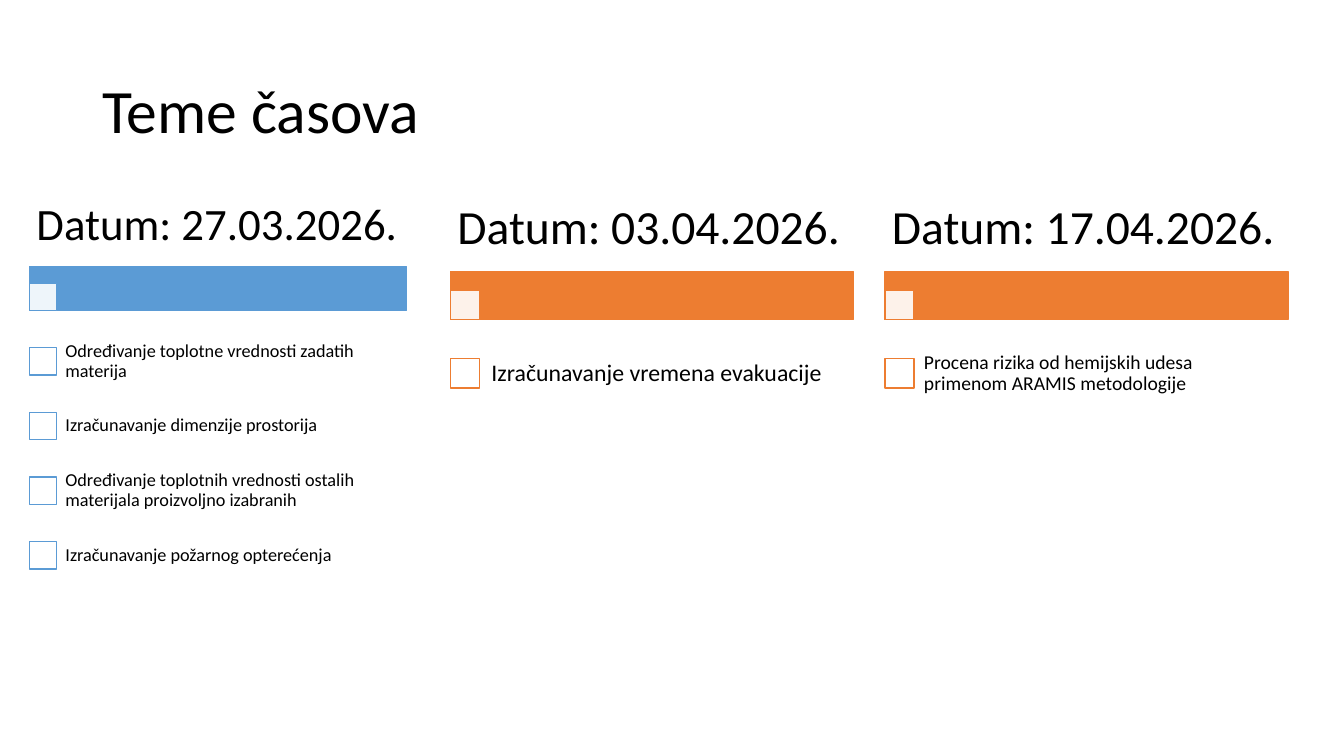
import pptx
import pptx.dml.color
import pptx.enum.shapes
import pptx.enum.text
import pptx.util
from lxml import etree
from pptx.util import Cm

BLUE, ORANGE = "5B9BD5", "ED7D31"
BASE_WIDTH = 9.5  # column width at which the measures below hold
TOP = 4.7

# left, width, colour, date, date size, topics, topic size, topic inset
COLUMNS = [
    (0.74, 9.5, BLUE, "27.03.2026.", 32, [
        "Određivanje toplotne vrednosti zadatih materija",
        "Izračunavanje dimenzije prostorija",
        "Određivanje toplotnih vrednosti ostalih materijala proizvoljno izabranih",
        "Izračunavanje požarnog opterećenja",
    ], 13, 0.25),
    (11.35, 10.16, ORANGE, "03.04.2026.", 34,
     ["Izračunavanje vremena evakuacije"], 17, 0.33),
    (22.3, 10.16, ORANGE, "17.04.2026.", 34,
     ["Procena rizika od hemijskih udesa primenom ARAMIS metodologije"], 14, 0.28),
]


def add_rectangle(shapes, left, top, width, height, fill, line):
    shape = shapes.add_shape(pptx.enum.shapes.MSO_SHAPE.RECTANGLE,
                             Cm(left), Cm(top), Cm(width), Cm(height))
    shape.shadow.inherit = False
    shape.fill.solid()
    shape.fill.fore_color.rgb = pptx.dml.color.RGBColor.from_string(fill)
    shape.line.color.rgb = pptx.dml.color.RGBColor.from_string(line)
    shape.line.width = pptx.util.Pt(1)
    return shape


def add_text(shapes, left, top, width, height, text, size, side_inset, end_inset):
    """Add a wrapped, vertically centred text box."""
    frame = shapes.add_textbox(Cm(left), Cm(top), Cm(width), Cm(height)).text_frame
    frame.word_wrap = True
    frame.vertical_anchor = pptx.enum.text.MSO_ANCHOR.MIDDLE
    frame.margin_left = frame.margin_right = Cm(side_inset)
    frame.margin_top = frame.margin_bottom = Cm(end_inset)
    paragraph = frame.paragraphs[0]
    paragraph.text = text
    paragraph.line_spacing = 0.9
    paragraph.font.name = "Calibri"
    paragraph.font.size = pptx.util.Pt(size)
    paragraph.font.color.rgb = pptx.dml.color.RGBColor.from_string("000000")


presentation = pptx.Presentation()
presentation.slide_width, presentation.slide_height = Cm(33.87), Cm(19.05)
slide = presentation.slides.add_slide(presentation.slide_layouts[6])

add_text(slide.shapes, 2.33, 1.01, 29.21, 3.68, "Teme časova", 44, 0.25, 0.13)

for left, width, colour, date, date_size, topics, topic_size, inset in COLUMNS:
    shapes = slide.shapes.add_group_shape().shapes
    scale = width / BASE_WIDTH
    heading_height = 2.01 * scale
    bar_height = 1.12 * scale
    box = 0.69 * scale
    row_height = 1.63 * scale
    text_offset = 0.66 * scale
    bar_top = TOP + heading_height
    bar_bottom = bar_top + bar_height
    rows_top = bar_bottom + 0.46 * scale

    add_rectangle(shapes, left, bar_top, width, bar_height, colour, colour)
    bar_box = add_rectangle(shapes, left, bar_bottom - box, box, box, "FFFFFF", colour)
    fill_colour = bar_box.fill._xPr.find(".//" + pptx.oxml.ns.qn("a:srgbClr"))
    etree.SubElement(fill_colour, pptx.oxml.ns.qn("a:alpha"), val="90000")
    add_text(shapes, left, TOP, width, heading_height, f"Datum: {date}", date_size, 0.18, 0.12)

    for index, topic in enumerate(topics):
        row_top = rows_top + index * row_height
        add_rectangle(shapes, left, row_top + (row_height - box) / 2, box, box, "FFFFFF", colour)
        add_text(shapes, left + text_offset, row_top, width - text_offset, row_height,
                 topic, topic_size, inset, inset)

presentation.save("out.pptx")
